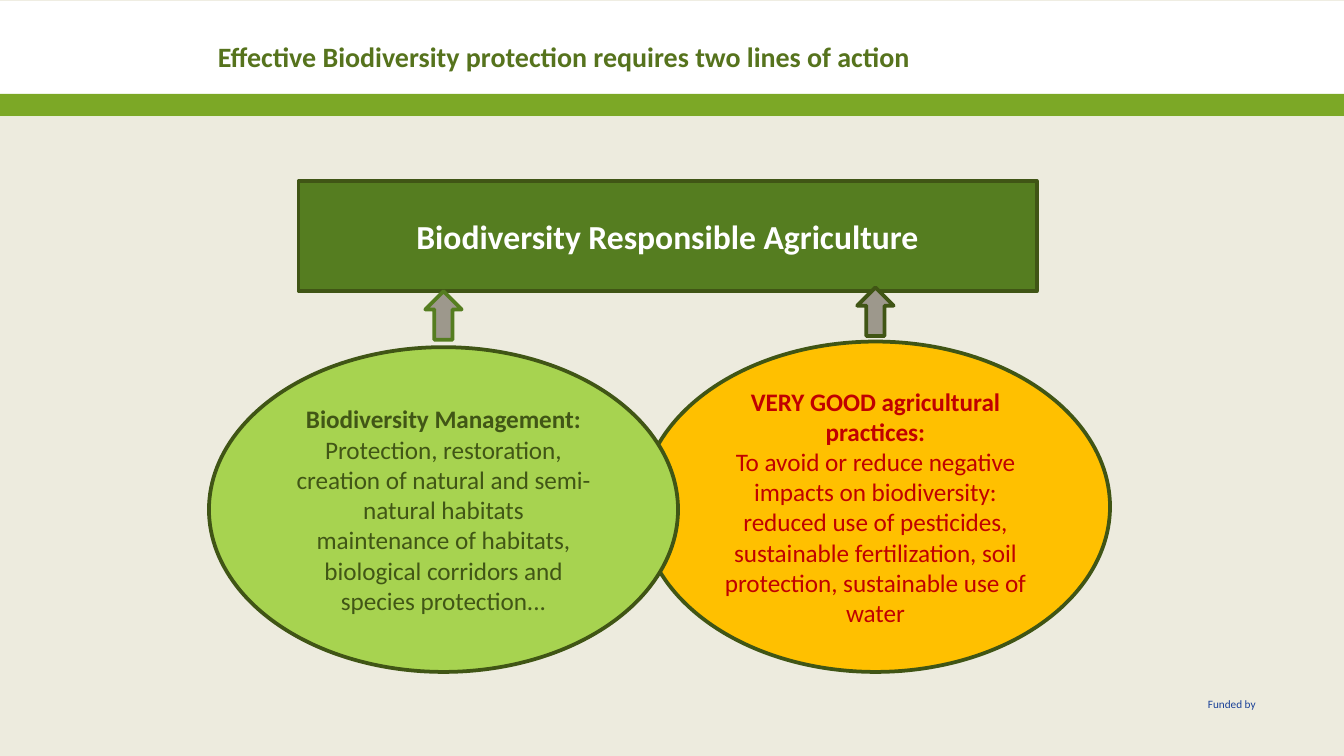
from lxml import etree
from pptx import Presentation
from pptx.dml.color import RGBColor
from pptx.enum import shapes, text
from pptx.oxml.ns import qn
from pptx.util import Pt

THEME = dict(
    font="Calibri", back="EDEBDE", white="FFFFFF", band="669900",
    edge="405515", green="557D20", gold="FFC000", lime="A7D350",
    gray="9D988C", title="56731D", red="C00000", moss="415616", blue="194097",
    head=15, goal=18, body=13.5, note=6, line=2,
)
KIND = shapes.MSO_SHAPE
MID = text.MSO_ANCHOR.MIDDLE
LEFT, CENTER = text.PP_ALIGN.LEFT, text.PP_ALIGN.CENTER

# Each text is a list of (words, bold) paragraphs.
TITLE = [("Effective Biodiversity protection requires two lines of action", True)]
GOAL = [("Biodiversity Responsible Agriculture", True)]
NOTE = [("Funded by", False)]
GOOD = [
    ("VERY GOOD agricultural practices:", True),
    ("To avoid or reduce negative impacts on biodiversity: reduced use of "
     "pesticides, sustainable fertilization, soil protection, sustainable "
     "use of water", False),
]
CARE = [
    ("Biodiversity Management:", True),
    ("Protection, restoration, creation of natural and semi-natural habitats", False),
    ("maintenance of habitats, biological corridors and species protection...", False),
]
# Lines of action: words, fill, ink, arrow edge, center x, oval top, arrow middle
LINES = [
    (GOOD, "gold", "red", "edge", 469, 183, 167),
    (CARE, "lime", "moss", "green", 237.6, 186, 169),
]
FOOT, OVAL, ARROW = 360, 251.3, (26, 19.5)


def color(name):
    return RGBColor.from_string(THEME[name])


def write(shape, paras, size, ink, align=CENTER, **opts):
    frame = shape.text_frame
    form = dict(word_wrap=True, vertical_anchor=MID,
                auto_size=text.MSO_AUTO_SIZE.NONE) | opts
    for key, value in form.items():
        setattr(frame, key, value)
    for i, (words, bold) in enumerate(paras):
        para = frame.add_paragraph() if i else frame.paragraphs[0]
        para.alignment = align
        run = para.add_run()
        run.text = words
        look = dict(name=THEME["font"], size=Pt(THEME[size]), bold=bold)
        for key, value in look.items():
            setattr(run.font, key, value)
        run.font.color.rgb = color(ink)


def draw(slide, kind, box, fill, edge=None):
    shape = slide.shapes.add_shape(kind, *map(Pt, box))
    shape.shadow.inherit = False
    shape.fill.solid()
    shape.fill.fore_color.rgb = color(fill)
    if edge:
        shape.line.color.rgb = color(edge)
        shape.line.width = Pt(THEME["line"])
    else:
        shape.line.fill.background()
    return shape


def main():
    deck = Presentation()
    deck.slide_width, deck.slide_height = Pt(720), Pt(405)
    slide = deck.slides.add_slide(deck.slide_layouts[5])
    slide.background.fill.solid()
    slide.background.fill.fore_color.rgb = color("back")

    draw(slide, KIND.RECTANGLE, (0, 0.5, 720, 62), "white")
    band = draw(slide, KIND.RECTANGLE, (0, 50.3, 723, 12), "band")
    tint = band.fill._xPr.find(qn("a:solidFill"))[0]
    etree.SubElement(tint, qn("a:alpha"), val="85000")

    note = slide.shapes.add_textbox(*map(Pt, (640, 370, 51, 14.5)))
    write(note, NOTE, "note", "blue", LEFT, vertical_anchor=text.MSO_ANCHOR.TOP)

    goal = draw(slide, KIND.RECTANGLE, (160, 97, 395.5, 59), "green", "edge")
    write(goal, GOAL, "goal", "white")

    wide, high = ARROW
    for words, fill, ink, edge, mid, top, level in LINES:
        oval = draw(slide, KIND.OVAL, (mid - OVAL / 2, top, OVAL, FOOT - top),
                    fill, "edge")
        write(oval, words, "body", ink)
        arrow = draw(slide, KIND.RIGHT_ARROW,
                     (mid - wide / 2, level - high / 2, wide, high), "gray", edge)
        arrow.rotation = 270

    title = slide.shapes.title
    place = dict(left=109.5, top=17.5, width=401, height=25.5)
    for key, value in place.items():
        setattr(title, key, Pt(value))
    write(title, TITLE, "head", "title", LEFT)
    slide.shapes._spTree.append(title._element)  # bring in front of the header

    deck.save("out.pptx")


if __name__ == "__main__":
    main()
